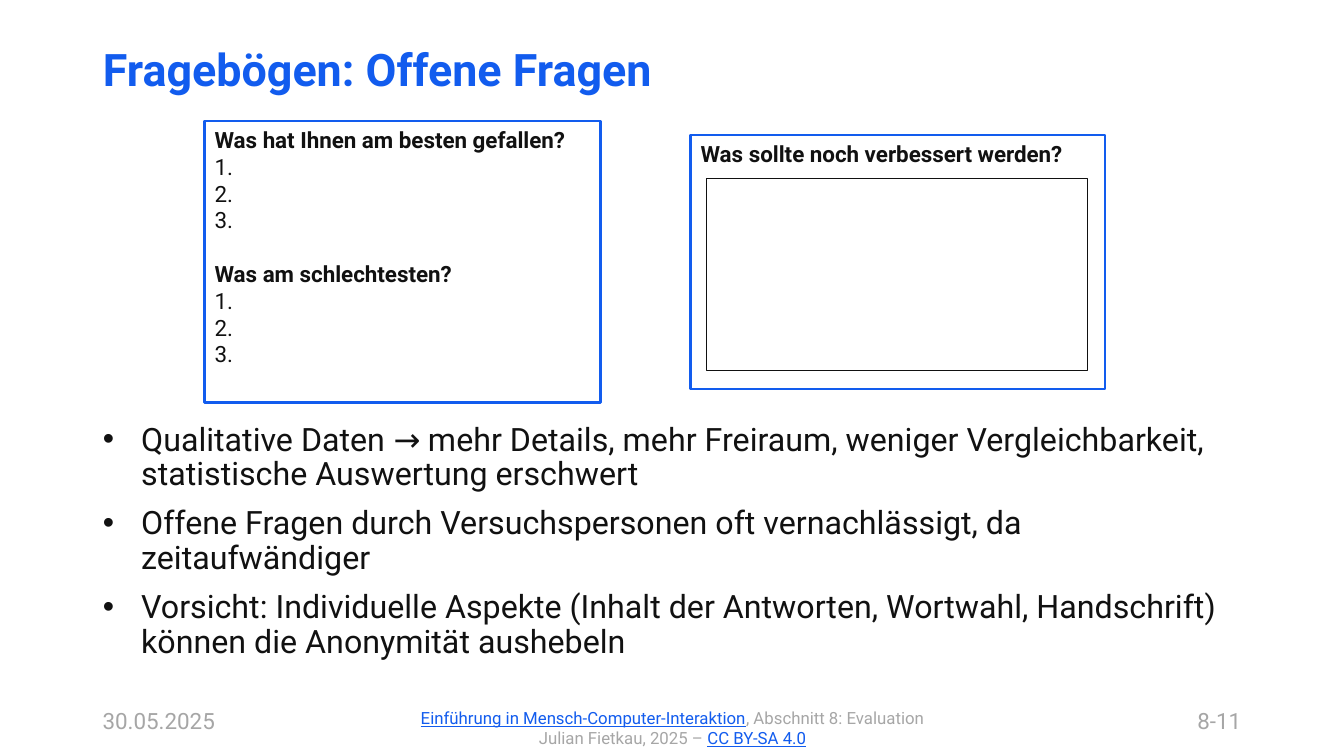
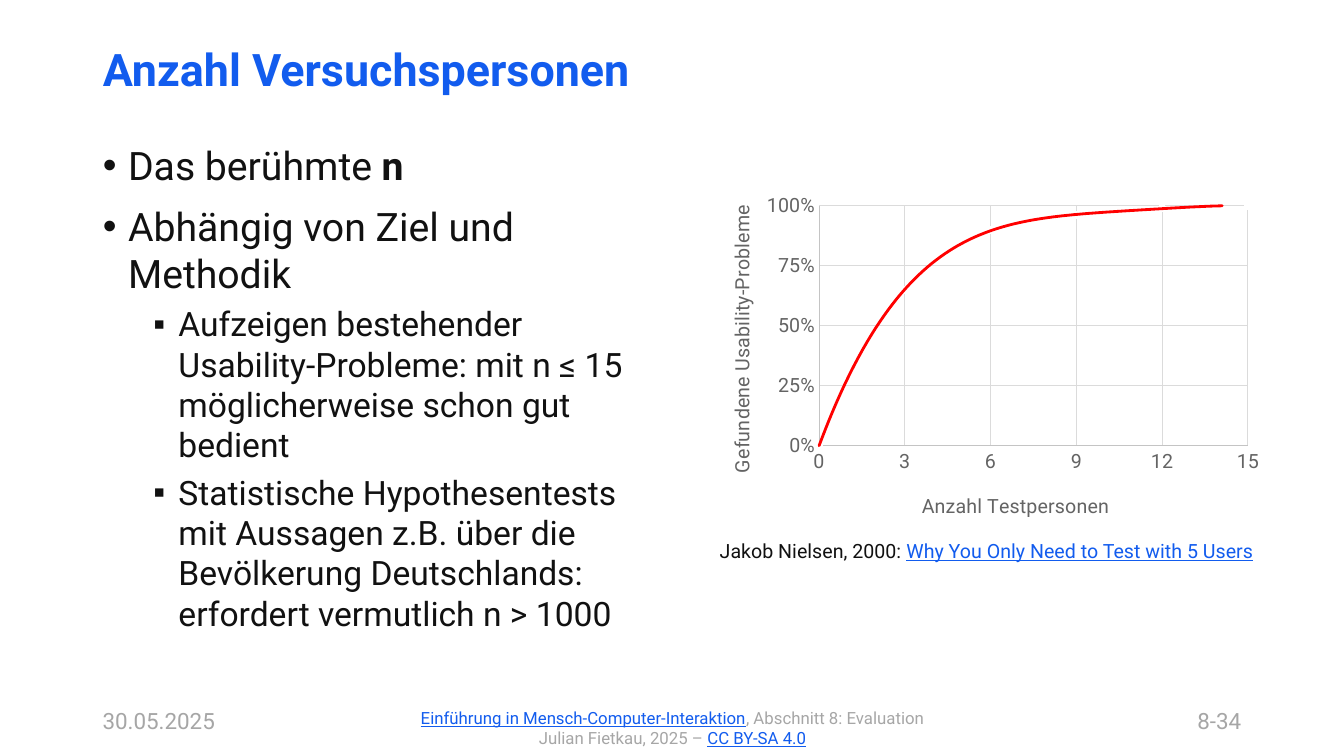
from lxml import etree
from pptx import Presentation
from pptx import util as u
from pptx.chart import data
from pptx.dml import color
from pptx.enum import chart as ch, shapes, text
from pptx.oxml import ns, parse_xml

HEX = {"blue": "125CEE", "ink": "111111", "gray": "A6A6A6", "label": "646464",
       "axis": "C4C4C4", "grid": "DBDBDB", "white": "FFFFFF", "red": "FF0000"}
FONT = "Roboto"
LEFT, CENTER, RIGHT = text.PP_ALIGN.LEFT, text.PP_ALIGN.CENTER, text.PP_ALIGN.RIGHT
TOP, MIDDLE = text.MSO_ANCHOR.TOP, text.MSO_ANCHOR.MIDDLE
LINK = {"color": "blue", "under": True}
BOLD = {"bold": True}


def rgb(name):
    return color.RGBColor.from_string(HEX[name])


def style(font, size, color="ink", bold=False, under=False):
    font.name, font.size = FONT, u.Pt(size)
    font.bold, font.underline = bold, under
    font.color.rgb = rgb(color)


def stroke(line, color, width):
    line.color.rgb = rgb(color)
    line.width = u.Pt(width)


def write(frame, paras, align=LEFT, anchor=TOP, **fmt):
    """Fill a frame; a paragraph is a string or a list of strings and (string, format) runs."""
    frame.word_wrap = True
    frame.auto_size = text.MSO_AUTO_SIZE.NONE
    frame.vertical_anchor = anchor
    for i, runs in enumerate(paras):
        par = frame.paragraphs[0] if i == 0 else frame.add_paragraph()
        par.alignment = align
        for item in [runs] if isinstance(runs, str) else runs:
            words, own = (item, {}) if isinstance(item, str) else item
            run = par.add_run()
            run.text = words
            style(run.font, **{**fmt, **own})
    return frame.paragraphs


def bullet(par, mark, left, hang, before, gap=1.0):
    par.space_before, par.line_spacing = u.Pt(before), gap
    props = par._p.get_or_add_pPr()
    props.set("marL", str(u.Inches(left)))
    props.set("indent", str(-u.Inches(hang)))
    etree.SubElement(props, ns.qn("a:buChar")).set("char", mark)


def place(node, x, y, w=None, h=None):
    """Give a chart part a fixed place, in fractions of the chart."""
    for old in node.findall(ns.qn("c:layout")):
        node.remove(old)
    layout = etree.Element(ns.qn("c:layout"))
    manual = etree.SubElement(layout, ns.qn("c:manualLayout"))
    parts = [("xMode", "edge"), ("yMode", "edge"), ("x", x), ("y", y)]
    if w:
        parts = [("layoutTarget", "inner")] + parts + [("w", w), ("h", h)]
    for tag, val in parts:
        etree.SubElement(manual, ns.qn("c:" + tag)).set("val", str(val))
    lead = node.find(ns.qn("c:tx"))
    node.insert(0 if lead is None else 1, layout)


class Deck:
    def __init__(self):
        self.prs = Presentation()
        self.prs.slide_width, self.prs.slide_height = u.Inches(13.33), u.Inches(7.5)
        self.slide = None

    def page(self, title, number):
        self.slide = self.prs.slides.add_slide(self.prs.slide_layouts[1])
        self.label((2.66, 6.97, 8.02, 0.5), [
            [("Einführung in Mensch-Computer-Interaktion", LINK),
             ", Abschnitt 8: Evaluation"],
            ["Julian Fietkau, 2025 – ", ("CC BY-SA 4.0", LINK)],
        ], align=CENTER, size=12, color="gray")
        self.label((0.92, 6.97, 1.74, 0.37), ["30.05.2025"], size=16, color="gray")
        self.label((9.1, 6.97, 3.31, 0.37), [number], align=RIGHT, size=16, color="gray")
        head = self.move(self.slide.shapes.title, (0.92, 0.37, 11.5, 0.68))
        pars = write(head.text_frame, [title], anchor=MIDDLE, size=32, color="blue", bold=True)
        pars[0].line_spacing = 0.9

    def move(self, shape, box):
        shape.left, shape.top, shape.width, shape.height = map(u.Inches, box)
        return shape

    def label(self, box, paras, **fmt):
        shape = self.slide.shapes.add_textbox(*map(u.Inches, box))
        return write(shape.text_frame, paras, **fmt)

    def body(self, box, paras, size):
        shape = self.move(self.slide.placeholders[1], box)
        return write(shape.text_frame, paras, size=size)

    def rect(self, box, paras=(), line="blue", width=2, fill=None):
        shape = self.slide.shapes.add_shape(shapes.MSO_SHAPE.RECTANGLE, *map(u.Inches, box))
        shape.shadow.inherit = False
        if fill:
            shape.fill.solid()
            shape.fill.fore_color.rgb = rgb(fill)
        else:
            shape.fill.background()
        stroke(shape.line, line, width)
        return write(shape.text_frame, paras, size=16)

    def axis(self, axis, title, spot, top, step, form):
        axis.minimum_scale, axis.maximum_scale, axis.major_unit = 0, top, step
        axis.major_tick_mark = axis.minor_tick_mark = ch.XL_TICK_MARK.NONE
        axis.has_major_gridlines = True
        stroke(axis.major_gridlines.format.line, "grid", 0.75)
        stroke(axis.format.line, "axis", 0.75)
        style(axis.tick_labels.font, 14, "label")
        axis.tick_labels.number_format = form
        axis.tick_labels.number_format_is_linked = False
        run = axis.axis_title.text_frame.paragraphs[0].add_run()
        run.text = title
        style(run.font, 14, "label")
        place(axis.axis_title._element, *spot)

    def curve(self, box, points):
        """Scatter chart whose points show only as a fitted curve."""
        table = data.XyChartData()
        series = table.add_series("Series 1")
        for x, y in points:
            series.add_data_point(x, y)
        chart = self.slide.shapes.add_chart(
            ch.XL_CHART_TYPE.XY_SCATTER, *map(u.Inches, box), table).chart
        chart.has_legend = chart.has_title = False
        style(chart.font, 10)
        plot = chart.plots[0]
        plot.vary_by_categories = False
        dots = plot.series[0]
        dots.smooth = False
        dots.format.line.fill.background()
        dots.marker.style, dots.marker.size = ch.XL_MARKER_STYLE.CIRCLE, 5
        dots.marker.format.fill.background()
        dots.marker.format.line.fill.background()
        trend = parse_xml(
            f'<c:trendline {ns.nsdecls("c", "a")}><c:spPr><a:ln w="{u.Pt(2)}" cap="rnd">'
            f'<a:solidFill><a:srgbClr val="{HEX["red"]}"/></a:solidFill></a:ln></c:spPr>'
            '<c:trendlineType val="poly"/><c:order val="4"/>'
            '<c:dispRSqr val="0"/><c:dispEq val="0"/></c:trendline>')
        dots._element.find(ns.qn("c:xVal")).addprevious(trend)
        self.axis(chart.category_axis, "Anzahl Testpersonen", (0.38, 0.87), 15, 3, "0")
        self.axis(chart.value_axis, "Gefundene Usability-Probleme", (0.04, 0.04), 1, 0.25, "0%")
        area = chart._chartSpace.find(".//" + ns.qn("c:plotArea"))
        place(area, 0.206, 0.053, 0.753, 0.692)


def survey(deck):
    deck.page("Fragebögen: Offene Fragen", "8-11")
    for par in deck.body((0.92, 4.15, 11.5, 2.6), [
        "Qualitative Daten → mehr Details, mehr Freiraum, weniger Vergleichbarkeit, "
        "statistische Auswertung erschwert",
        "Offene Fragen durch Versuchspersonen oft vernachlässigt, da zeitaufwändiger",
        "Vorsicht: Individuelle Aspekte (Inhalt der Antworten, Wortwahl, Handschrift) "
        "können die Anonymität aushebeln",
    ], 23):
        bullet(par, "•", 0.38, 0.38, 10, 0.9)
    ranks = ["1.", "2.", "3."]
    pars = deck.rect((2.03, 1.2, 3.93, 2.79), [
        [("Was hat Ihnen am besten gefallen?", BOLD)], *ranks,
        [("Was am schlechtesten?", BOLD)], *ranks])
    pars[4].space_before = u.Pt(19)
    deck.rect((6.85, 1.34, 4.11, 2.52), [[("Was sollte noch verbessert werden?", BOLD)]])
    deck.rect((7.01, 1.77, 3.78, 1.91), line="ink", width=0.75, fill="white")


def sample(deck):
    deck.page("Anzahl Versuchspersonen", "8-34")
    sub = {"size": 24}
    pars = deck.body((0.92, 1.35, 5.46, 5.41), [
        ["Das berühmte ", ("n", BOLD)],
        "Abhängig von Ziel und Methodik",
        [("Aufzeigen bestehender Usability-Probleme: mit n ≤ 15 möglicherweise "
          "schon gut bedient", sub)],
        [("Statistische Hypothesentests mit Aussagen z.B. über die Bevölkerung "
          "Deutschlands: erfordert vermutlich n > 1000", sub)],
    ], 28)
    for par in pars[:2]:
        bullet(par, "•", 0.25, 0.25, 10)
    for par in pars[2:]:
        par.level = 1
        bullet(par, "▪", 0.75, 0.25, 5)
    deck.label((6.96, 5.3, 5.65, 0.34), [
        ["Jakob Nielsen, 2000: ", ("Why You Only Need to Test with 5 Users", LINK)],
    ], align=CENTER, size=14)
    deck.curve((6.96, 1.86, 5.65, 3.44),
               zip(range(0, 16, 3), (0, 0.65, 0.9, 0.96, 0.99, 1)))


def main():
    deck = Deck()
    survey(deck)
    sample(deck)
    deck.prs.save("out.pptx")


if __name__ == "__main__":
    main()
